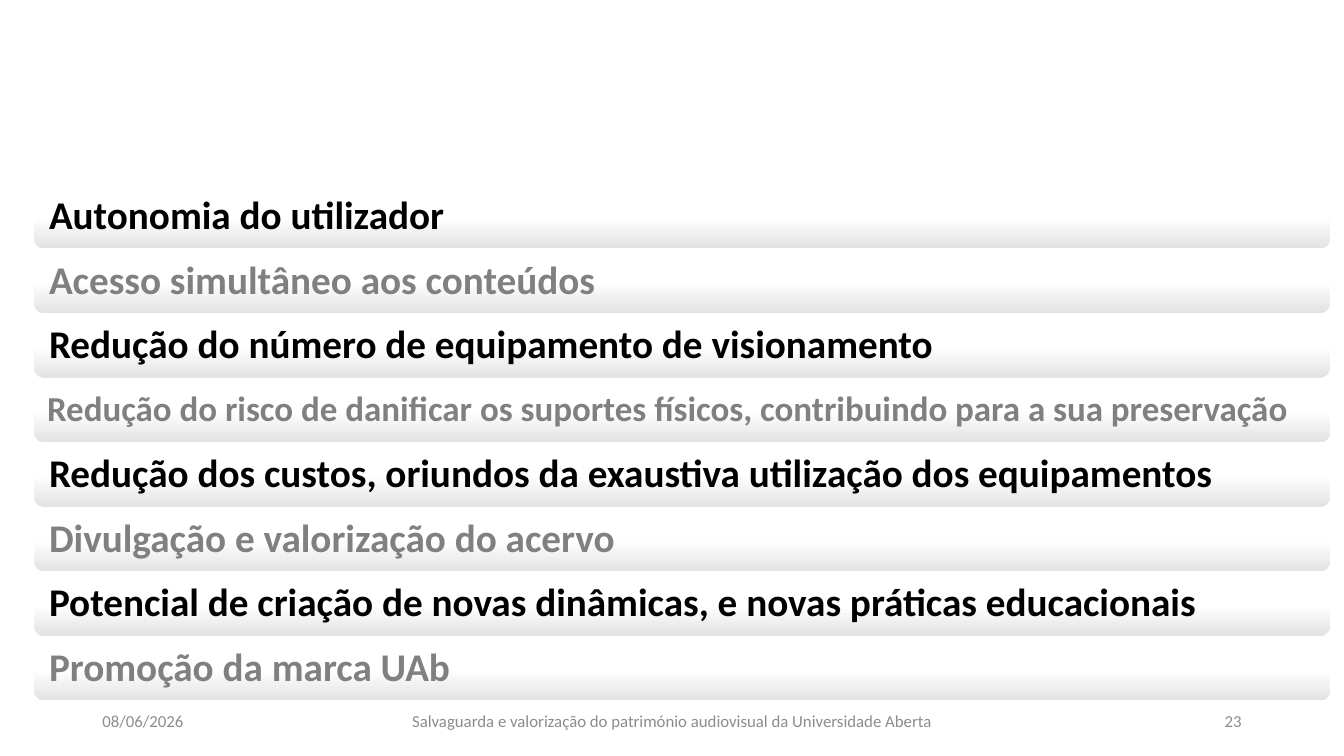
from copy import deepcopy

from pptx import Presentation
from pptx.dml.color import RGBColor
from pptx.enum.shapes import MSO_SHAPE
from pptx.enum.text import MSO_ANCHOR, PP_ALIGN
from pptx.util import Cm, Pt

ROUNDED = MSO_SHAPE.ROUNDED_RECTANGLE
MIDDLE = MSO_ANCHOR.MIDDLE
LEFT, CENTER, RIGHT = PP_ALIGN.LEFT, PP_ALIGN.CENTER, PP_ALIGN.RIGHT

# Content: benefit, font size (pt), inset (cm)
BENEFITS = [
    ("Autonomia do utilizador", 28, 0.3),
    ("Acesso simultâneo aos conteúdos", 28, 0.3),
    ("Redução do número de equipamento de visionamento", 28, 0.3),
    ("Redução do risco de danificar os suportes físicos, "
     "contribuindo para a sua preservação", 25, 0.25),
    ("Redução dos custos, oriundos da exaustiva utilização dos equipamentos", 28, 0.3),
    ("Divulgação e valorização do acervo", 28, 0.3),
    ("Potencial de criação de novas dinâmicas, e novas práticas educacionais", 28, 0.3),
    ("Promoção da marca UAb", 28, 0.3),
]
# Footer: text, left (cm), width (cm), alignment
FOOTER = [
    ("08/06/2026", 2.33, 7.62, LEFT),
    ("Salvaguarda e valorização do património audiovisual da Universidade Aberta",
     7.95, 17.98, CENTER),
    ("23", 23.92, 7.62, RIGHT),
]
BENEFIT_COLORS = ["000000", "808080"]
FOOTER_COLOR = "8C8C8C"
BAR_GRADIENT = [(0, "FFFFFF"), (0.5, "FFFFFF"), (1, "E3E3E3")]

# Layout in cm
BAR_LEFT, BAR_WIDTH, BAR_HEIGHT = 0.86, 32.66, 1.59
FIRST_TOP, LAST_TOP = 4.67, 16.06
PITCH = (LAST_TOP - FIRST_TOP) / (len(BENEFITS) - 1)
FOOTER_TOP, FOOTER_HEIGHT = 17.65, 1.02


def color(hex_value):
    return RGBColor.from_string(hex_value)


def write(shape, text, align, spacing, font_format, hex_value):
    frame = shape.text_frame
    frame.word_wrap = True
    frame.vertical_anchor = MIDDLE
    paragraph = frame.paragraphs[0]
    paragraph.text = text
    paragraph.alignment = align
    paragraph.line_spacing = spacing
    for key, value in font_format.items():
        setattr(paragraph.font, key, value)
    paragraph.font.color.rgb = color(hex_value)


def shade(bar):
    bar.fill.gradient()
    bar.fill.gradient_angle = 270
    stop_list = bar.fill._fill._gradFill.gsLst
    stop_list.append(deepcopy(stop_list[0]))
    for stop, (position, hex_value) in zip(bar.fill.gradient_stops, BAR_GRADIENT):
        stop.position = position
        stop.color.rgb = color(hex_value)


presentation = Presentation()
presentation.slide_width, presentation.slide_height = Cm(33.87), Cm(19.05)
slide = presentation.slides.add_slide(presentation.slide_layouts[6])

# Footer line
for text, left, width, align in FOOTER:
    note = slide.shapes.add_textbox(Cm(left), Cm(FOOTER_TOP), Cm(width), Cm(FOOTER_HEIGHT))
    write(note, text, align, 1.0, {"name": "Calibri", "size": Pt(12)}, FOOTER_COLOR)

# Benefit bars
for row, (benefit, size, inset) in enumerate(BENEFITS):
    bar = slide.shapes.add_shape(ROUNDED, Cm(BAR_LEFT), Cm(FIRST_TOP + row * PITCH),
                                 Cm(BAR_WIDTH), Cm(BAR_HEIGHT))
    bar.adjustments[0] = 1 / 6
    bar.shadow.inherit = False
    bar.line.fill.background()
    shade(bar)
    for side in ("left", "top", "right", "bottom"):
        setattr(bar.text_frame, f"margin_{side}", Cm(inset))
    write(bar, benefit, LEFT, 0.9, {"name": "Calibri", "size": Pt(size), "bold": True},
          BENEFIT_COLORS[row % 2])

presentation.save("out.pptx")
